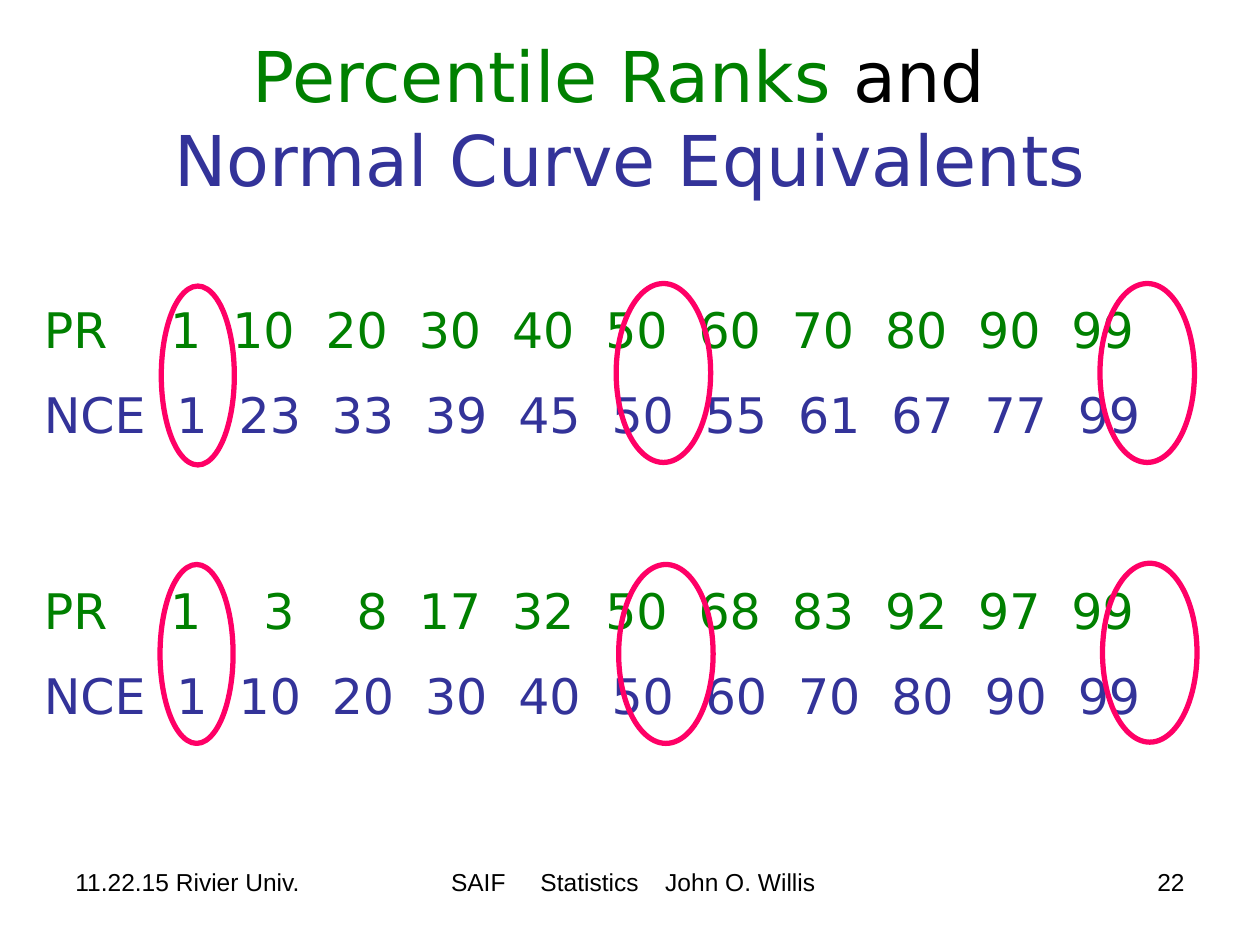
import pptx
import pptx.dml.color
import pptx.enum.shapes
import pptx.enum.text
import pptx.util
import lxml.etree
from pptx.util import Inches

COLORS = {"black": "000000", "rank": "008000", "equivalent": "333399", "ring": "FF0066"}
ALIGN = pptx.enum.text.PP_ALIGN
ANCHOR = pptx.enum.text.MSO_ANCHOR

TITLE_LINES = [
    [("Percentile Ranks ", "rank"), ("and ", "black")],
    [("Normal Curve Equivalents", "equivalent")],
]
SCORE_BLOCKS = [
    (2.33, [1, 10, 20, 30, 40, 50, 60, 70, 80, 90, 99],
     [1, 23, 33, 39, 45, 50, 55, 61, 67, 77, 99]),
    (4.56, [1, 3, 8, 17, 32, 50, 68, 83, 92, 97, 99],
     [1, 10, 20, 30, 40, 50, 60, 70, 80, 90, 99]),
]
SCORE_ROWS = [("PR", "rank", 1.25), ("NCE", "equivalent", 1.3)]
SCORE_PITCH = 0.74
RING_HEIGHT = 1.42
RINGS = [
    (1.28, 2.27, 0.58), (4.89, 2.25, 0.75), (8.73, 2.25, 0.75),
    (1.27, 4.48, 0.58), (4.91, 4.48, 0.75), (8.75, 4.47, 0.75),
]
FOOTERS = [
    (0.5, 2.33, ALIGN.LEFT, ["11.22.15 Rivier Univ."], [], 0.1),
    (3.42, 3.17, ALIGN.LEFT, ["SAIF", "Statistics", "John O. Willis"], [0.71, 1.7], 0.16),
    (7.17, 2.33, ALIGN.RIGHT, ["22"], [], 0.1),
]


def rgb(name):
    return pptx.dml.color.RGBColor.from_string(COLORS[name])


def add_text_frame(slide, left, top, width, height, anchor=ANCHOR.TOP):
    shape = slide.shapes.add_textbox(Inches(left), Inches(top), Inches(width), Inches(height))
    frame = shape.text_frame
    frame.word_wrap = True
    frame.vertical_anchor = anchor
    return frame


def add_run(paragraph, text, size, color, font="DejaVu Sans"):
    run = paragraph.add_run()
    run.text = text
    run.font.size = pptx.util.Pt(size)
    run.font.name = font
    run.font.color.rgb = rgb(color)


def set_tabs(paragraph, positions, side):
    properties = paragraph._p.get_or_add_pPr()
    namespace = pptx.oxml.ns.qn("a:tabLst")
    tab_list = lxml.etree.SubElement(properties, namespace)
    for position in positions:
        tab = lxml.etree.SubElement(tab_list, pptx.oxml.ns.qn("a:tab"))
        tab.set("pos", str(Inches(position)))
        tab.set("algn", side)


def add_title(slide):
    frame = add_text_frame(slide, 0.5, 0.3, 9, 1.25, ANCHOR.MIDDLE)
    paragraph = frame.paragraphs[0]
    paragraph.alignment = ALIGN.CENTER
    for index, line in enumerate(TITLE_LINES):
        if index:
            paragraph.add_line_break()
        for text, color in line:
            add_run(paragraph, text, 40, color)


def add_scores(slide, top, *series):
    frame = add_text_frame(slide, 0.25, top, 9.33, 1.27)
    for index, ((label, color, first_tab), scores) in enumerate(zip(SCORE_ROWS, series)):
        paragraph = frame.add_paragraph() if index else frame.paragraphs[0]
        if index:
            paragraph.space_before = pptx.util.Pt(15)
        set_tabs(paragraph, [first_tab + SCORE_PITCH * n for n in range(len(scores))], "r")
        add_run(paragraph, "\t".join([label, *map(str, scores)]), 28, color)


def add_ring(slide, left, top, width):
    shape = slide.shapes.add_shape(
        pptx.enum.shapes.MSO_SHAPE.OVAL,
        Inches(left), Inches(top), Inches(width), Inches(RING_HEIGHT))
    shape.shadow.inherit = False
    shape.fill.background()
    shape.line.color.rgb = rgb("ring")
    shape.line.width = pptx.util.Pt(3)


def add_footer(slide, left, width, alignment, parts, tabs, margin):
    frame = add_text_frame(slide, left, 6.83, width, 0.52)
    frame.margin_left = Inches(margin)
    paragraph = frame.paragraphs[0]
    paragraph.alignment = alignment
    if tabs:
        set_tabs(paragraph, tabs, "l")
    add_run(paragraph, "\t".join(parts), 14, "black", "Arial")


def main():
    presentation = pptx.Presentation()
    presentation.slide_width = Inches(10)
    presentation.slide_height = Inches(7.5)
    slide = presentation.slides.add_slide(presentation.slide_layouts[6])
    for footer in FOOTERS:
        add_footer(slide, *footer)
    add_title(slide)
    for block in SCORE_BLOCKS:
        add_scores(slide, *block)
    for ring in RINGS:
        add_ring(slide, *ring)
    presentation.save("out.pptx")


if __name__ == "__main__":
    main()
